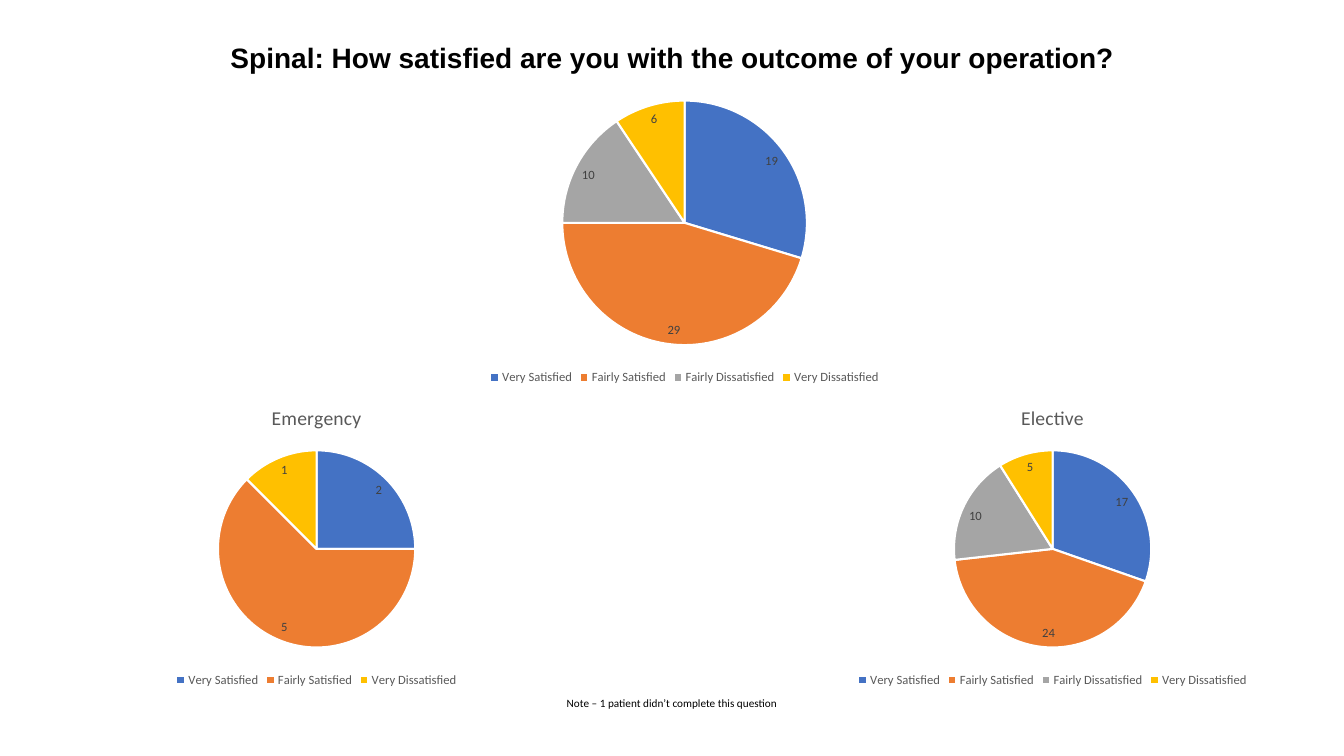
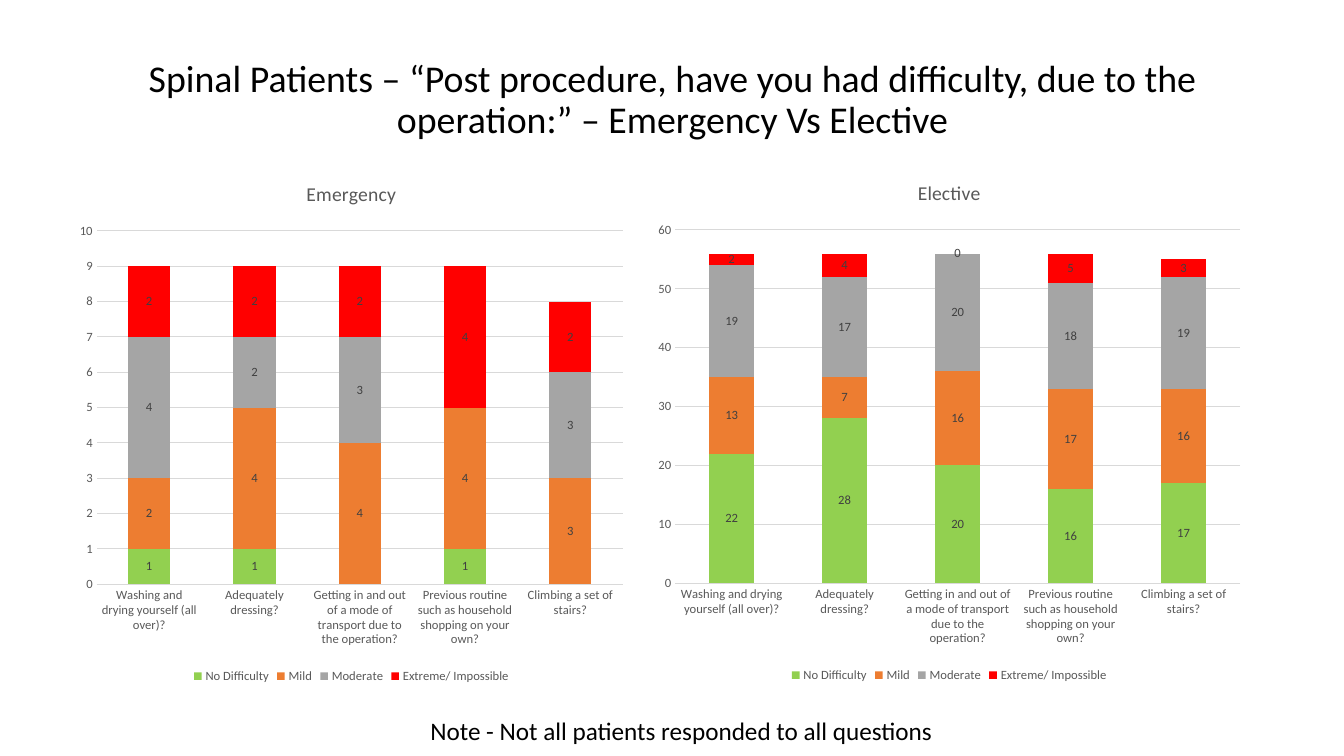
import dataclasses
import typing

import pptx
import pptx.chart.chart
import pptx.chart.data
import pptx.dml.color
import pptx.enum.chart
import pptx.enum.text
import pptx.slide
import pptx.util

Inches = pptx.util.Inches
Pt = pptx.util.Pt
RGBColor = pptx.dml.color.RGBColor
Kind = pptx.enum.chart.XL_CHART_TYPE
Place = pptx.enum.chart.XL_LABEL_POSITION
Align = pptx.enum.text.PP_ALIGN

# Shared colours
BLACK = RGBColor(0x00, 0x00, 0x00)
WHITE = RGBColor(0xFF, 0xFF, 0xFF)
DARK = RGBColor(0x40, 0x40, 0x40)
GREY = RGBColor(0x59, 0x59, 0x59)
RULE = RGBColor(0xD9, 0xD9, 0xD9)
BLUE = RGBColor(0x44, 0x72, 0xC4)
ORANGE = RGBColor(0xED, 0x7D, 0x31)
SILVER = RGBColor(0xA5, 0xA5, 0xA5)
GOLD = RGBColor(0xFF, 0xC0, 0x00)
GREEN = RGBColor(0x92, 0xD0, 0x50)
RED = RGBColor(0xFF, 0x00, 0x00)

# Answers and their colours
MOODS = {"Very Satisfied": BLUE, "Fairly Satisfied": ORANGE,
         "Fairly Dissatisfied": SILVER, "Very Dissatisfied": GOLD}
GRADES = {"No Difficulty": GREEN, "Mild": ORANGE,
          "Moderate": SILVER, "Extreme/ Impossible": RED}
TASKS = ["Washing and drying yourself (all over)?",
         "Adequately dressing?",
         "Getting in and out of a mode of transport due to the operation?",
         "Previous routine such as household shopping on your own?",
         "Climbing a set of stairs?"]


class Box(typing.NamedTuple):
    left: float
    top: float
    width: float
    height: float

    def sides(self) -> list[pptx.util.Length]:
        return [Inches(side) for side in self]


@dataclasses.dataclass
class Pie:
    box: Box
    name: str
    counts: dict[str, int]
    title: str = ""


@dataclasses.dataclass
class Stack:
    box: Box
    title: str
    rows: list[list[int | None]]  # one row per grade
    top: int
    step: int


PIES = [
    Pie(Box(4.29, 0.86, 5, 3), "Series 1", dict(zip(MOODS, [19, 29, 10, 6]))),
    Pie(Box(0.64, 3.86, 5, 3), "Series 1",
        {"Very Satisfied": 2, "Fairly Satisfied": 5, "Very Dissatisfied": 1},
        "Emergency"),
    Pie(Box(7.94, 3.86, 5, 3), "Elective",
        dict(zip(MOODS, [17, 24, 10, 5])), "Elective"),
]

STACKS = [
    Stack(Box(6.41, 1.59, 6.01, 5.22), "Elective",
          [[22, 28, 20, 16, 17], [13, 7, 16, 17, 16],
           [19, 17, 20, 18, 19], [2, 4, 0, 5, 3]], 60, 10),
    Stack(Box(0.68, 1.6, 5.61, 5.22), "Emergency",
          [[1, 1, None, 1, None], [2, 4, 4, 4, 3],
           [4, 2, 3, None, 3], [2, 2, 2, 4, 2]], 10, 1),
]


def assign(thing: typing.Any, values: dict[str, typing.Any]) -> None:
    for name, value in values.items():
        setattr(thing, name, value)


def style(font: typing.Any, size: float, hue: RGBColor,
          face: str = "Calibri", bold: bool = False) -> None:
    assign(font, {"size": Pt(size), "name": face, "bold": bold})
    font.color.rgb = hue


def paint(form: typing.Any, hue: RGBColor) -> None:
    form.fill.solid()
    form.fill.fore_color.rgb = hue


def rule(line: typing.Any, hue: RGBColor, width: float) -> None:
    line.color.rgb = hue
    line.width = Pt(width)


# Slide text
def add_page(deck: typing.Any, text: str, box: Box, size: float,
             face: str = "Calibri", bold: bool = False) -> pptx.slide.Slide:
    page = deck.slides.add_slide(deck.slide_layouts[5])
    title = page.shapes.title
    assign(title, dict(zip(("left", "top", "width", "height"), box.sides())))
    frame = title.text_frame
    assign(frame, {"text": text, "word_wrap": True,
                   "auto_size": pptx.enum.text.MSO_AUTO_SIZE.NONE,
                   "vertical_anchor": pptx.enum.text.MSO_ANCHOR.MIDDLE})
    line = frame.paragraphs[0]
    assign(line, {"alignment": Align.CENTER, "line_spacing": 0.9})
    style(line.runs[0].font, size, BLACK, face, bold)
    return page


def add_note(page: pptx.slide.Slide, text: str, box: Box, size: float,
             align: Align) -> None:
    frame = page.shapes.add_textbox(*box.sides()).text_frame
    assign(frame, {"text": text, "word_wrap": False,
                   "auto_size": pptx.enum.text.MSO_AUTO_SIZE.SHAPE_TO_FIT_TEXT})
    line = frame.paragraphs[0]
    line.alignment = align
    style(line.runs[0].font, size, BLACK)


# Chart parts
def add_chart(page: pptx.slide.Slide, kind: Kind, box: Box, title: str,
              data: pptx.chart.data.CategoryChartData,
              place: Place) -> pptx.chart.chart.Chart:
    chart = page.shapes.add_chart(kind, *box.sides(), data).chart
    style(chart.font, 10, BLACK)
    assign(chart, {"has_title": bool(title), "has_legend": True})
    if title:
        frame = chart.chart_title.text_frame
        frame.text = title
        style(frame.paragraphs[0].runs[0].font, 14, GREY)
        chart.chart_title.include_in_layout = False
    assign(chart.legend, {"include_in_layout": False,
                          "position": pptx.enum.chart.XL_LEGEND_POSITION.BOTTOM})
    style(chart.legend.font, 9, GREY)
    plot = chart.plots[0]
    plot.has_data_labels = True
    assign(plot.data_labels, {"show_value": True, "show_percentage": False,
                              "position": place})
    style(plot.data_labels.font, 9, DARK)
    return chart


def add_pie(page: pptx.slide.Slide, pie: Pie) -> None:
    data = pptx.chart.data.CategoryChartData()
    data.categories = list(pie.counts)
    data.add_series(pie.name, list(pie.counts.values()))
    chart = add_chart(page, Kind.PIE, pie.box, pie.title, data,
                      Place.INSIDE_END)
    plot = chart.plots[0]
    plot.vary_by_categories = True
    for i, mood in enumerate(pie.counts):
        form = plot.series[0].points[i].format
        paint(form, MOODS[mood])
        rule(form.line, WHITE, 1.5)


def add_stack(page: pptx.slide.Slide, stack: Stack) -> None:
    data = pptx.chart.data.CategoryChartData()
    data.categories = TASKS
    for grade, row in zip(GRADES, stack.rows):
        data.add_series(grade, row)
    chart = add_chart(page, Kind.COLUMN_STACKED, stack.box, stack.title, data,
                      Place.CENTER)
    plot = chart.plots[0]
    assign(plot, {"gap_width": 150, "overlap": 100,
                  "vary_by_categories": False})
    for bars, hue in zip(plot.series, GRADES.values()):
        paint(bars.format, hue)
        bars.invert_if_negative = False

    # Axes and grid
    none = pptx.enum.chart.XL_TICK_MARK.NONE
    for axis in (chart.category_axis, chart.value_axis):
        assign(axis, {"major_tick_mark": none, "minor_tick_mark": none})
        style(axis.tick_labels.font, 9, GREY)
    rule(chart.category_axis.format.line, RULE, 0.75)
    scale = chart.value_axis
    assign(scale, {"minimum_scale": 0, "maximum_scale": stack.top,
                   "major_unit": stack.step, "has_major_gridlines": True})
    scale.format.line.fill.background()
    rule(scale.major_gridlines.format.line, RULE, 0.75)


def main() -> None:
    deck = pptx.Presentation()
    assign(deck, {"slide_width": Inches(13.33), "slide_height": Inches(7.5)})

    # Outcome pies
    page = add_page(
        deck, "Spinal: How satisfied are you with the outcome of your operation?",
        Box(0.92, 0.23, 11.5, 0.71), 20, "Arial", True)
    add_note(page, "Note – 1 patient didn’t complete this question",
             Box(5.51, 6.86, 2.31, 0.24), 8, Align.CENTER)
    for pie in PIES:
        add_pie(page, pie)

    # Stacks of difficulty by task
    page = add_page(
        deck, "Spinal Patients – “Post procedure, have you had difficulty, "
        "due to the operation:” – Emergency Vs Elective",
        Box(0.92, 0.4, 11.5, 1.2), 27)
    add_note(page, "Note - Not all patients responded to all questions",
             Box(4.17, 7.05, 5.24, 0.4), 18, Align.LEFT)
    for stack in STACKS:
        add_stack(page, stack)

    deck.save("out.pptx")


if __name__ == "__main__":
    main()
